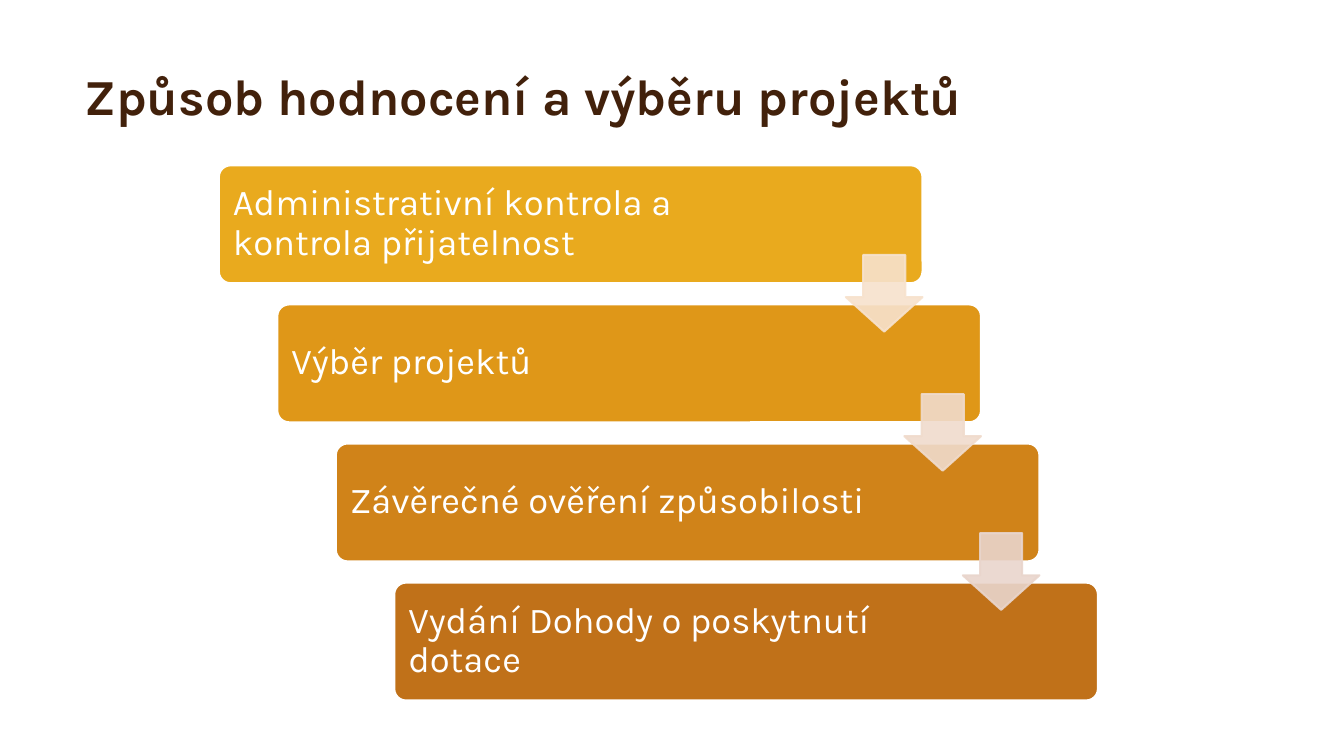
from lxml.etree import SubElement
from pptx import Presentation
from pptx.dml.color import RGBColor
from pptx.enum.shapes import MSO_SHAPE as SHAPE
from pptx.enum.text import MSO_ANCHOR as ANCHOR
from pptx.oxml.ns import qn
from pptx.util import Pt

PX = 9144  # 100 px to the inch
FONT = "Karla"
WHITE = RGBColor(0xFF, 0xFF, 0xFF)
BROWN = RGBColor(0x42, 0x21, 0x0B)

# Steps of the process: text and bar colour
STEPS = [
    ("Administrativní kontrola a kontrola přijatelnost", RGBColor(0xE9, 0xAA, 0x1E)),
    ("Výběr projektů", RGBColor(0xDF, 0x97, 0x18)),
    ("Závěrečné ověření způsobilosti", RGBColor(0xD0, 0x83, 0x19)),
    ("Vydání Dohody o poskytnutí dotace", RGBColor(0xC0, 0x71, 0x19)),
]
ARROW_COLORS = [
    RGBColor(0xF7, 0xE2, 0xCD),
    RGBColor(0xF0, 0xDB, 0xCC),
    RGBColor(0xE9, 0xD5, 0xCC),
]

# Staircase geometry in px
LEFT, TOP = 217, 164
STEP_X, STEP_Y = 58, 138
BAR_W, BAR_H = 698, 117
ARROW = 76
ARROW_DX, ARROW_DY = BAR_W - ARROW, 89


def px(*lengths):
    return [n * PX for n in lengths]


def add_text(s, text, box, size, color, bold=False, inset=10, spacing=1.0):
    tf = s.shapes.add_textbox(*px(*box)).text_frame
    tf.word_wrap = True
    tf.vertical_anchor = ANCHOR.MIDDLE
    tf.margin_left = tf.margin_right = inset * PX
    tf.margin_top = tf.margin_bottom = inset * PX
    p = tf.paragraphs[0]
    p.line_spacing = spacing
    r = p.add_run()
    r.text = text
    r.font.name = FONT
    r.font.size = Pt(size)
    r.font.bold = bold
    r.font.color.rgb = color


def add_preset(s, kind, box, adjustments, fill, line):
    sp = s.shapes.add_shape(kind, *px(*box))
    sp.shadow.inherit = False
    for i, value in enumerate(adjustments):
        sp.adjustments[i] = value
    sp.fill.solid()
    sp.fill.fore_color.rgb = fill
    sp.line.color.rgb = line
    sp.line.width = Pt(1.5)
    return sp


def set_opacity(sp, percent):
    for color in sp._element.spPr.iter(qn("a:srgbClr")):
        SubElement(color, qn("a:alpha"), val=str(percent * 1000))


def add_step(s, x, y, text, color):
    add_preset(s, SHAPE.ROUNDED_RECTANGLE, (x, y, BAR_W, BAR_H), [0.1], color, WHITE)
    add_text(s, text, (x + 3, y + 3, 557, 110), 26, WHITE, inset=11, spacing=0.9)


def add_arrow(s, x, y, color):
    sp = add_preset(s, SHAPE.DOWN_ARROW, (x, y, ARROW, ARROW), [0.55, 0.45], color, color)
    set_opacity(sp, 90)


def main():
    prs = Presentation()
    prs.slide_width, prs.slide_height = px(1333, 750)
    s = prs.slides.add_slide(prs.slide_layouts[6])

    # Title
    add_text(s, "Způsob hodnocení a výběru projektů", (74, 55, 1158, 80), 36, BROWN,
             bold=True)

    # Bars going down to the right
    for i, (text, color) in enumerate(STEPS):
        add_step(s, LEFT + i * STEP_X, TOP + i * STEP_Y, text, color)

    # Arrows from each bar to the next
    for i, color in enumerate(ARROW_COLORS):
        add_arrow(s, LEFT + ARROW_DX + i * STEP_X, TOP + ARROW_DY + i * STEP_Y, color)

    prs.save("out.pptx")


if __name__ == "__main__":
    main()
